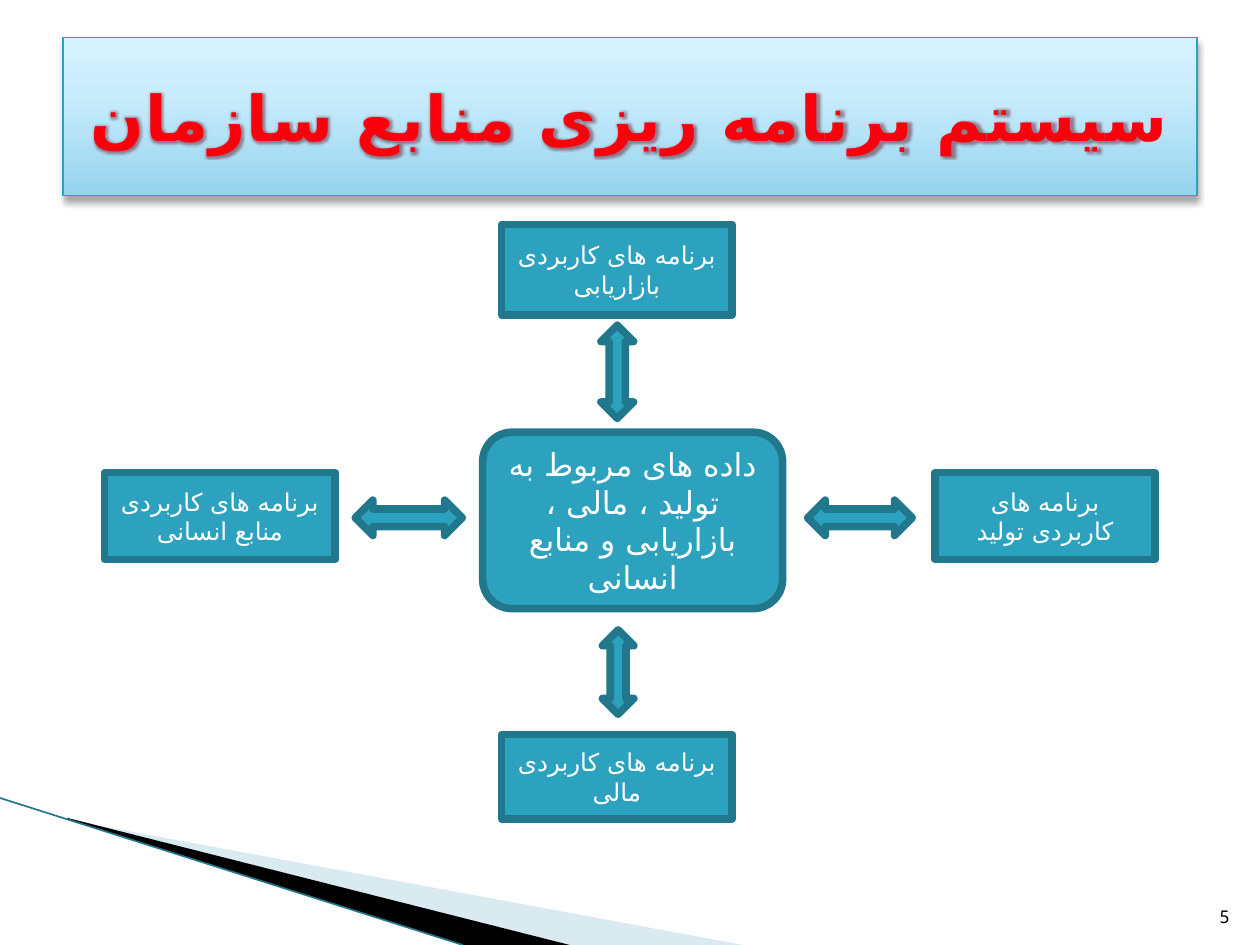
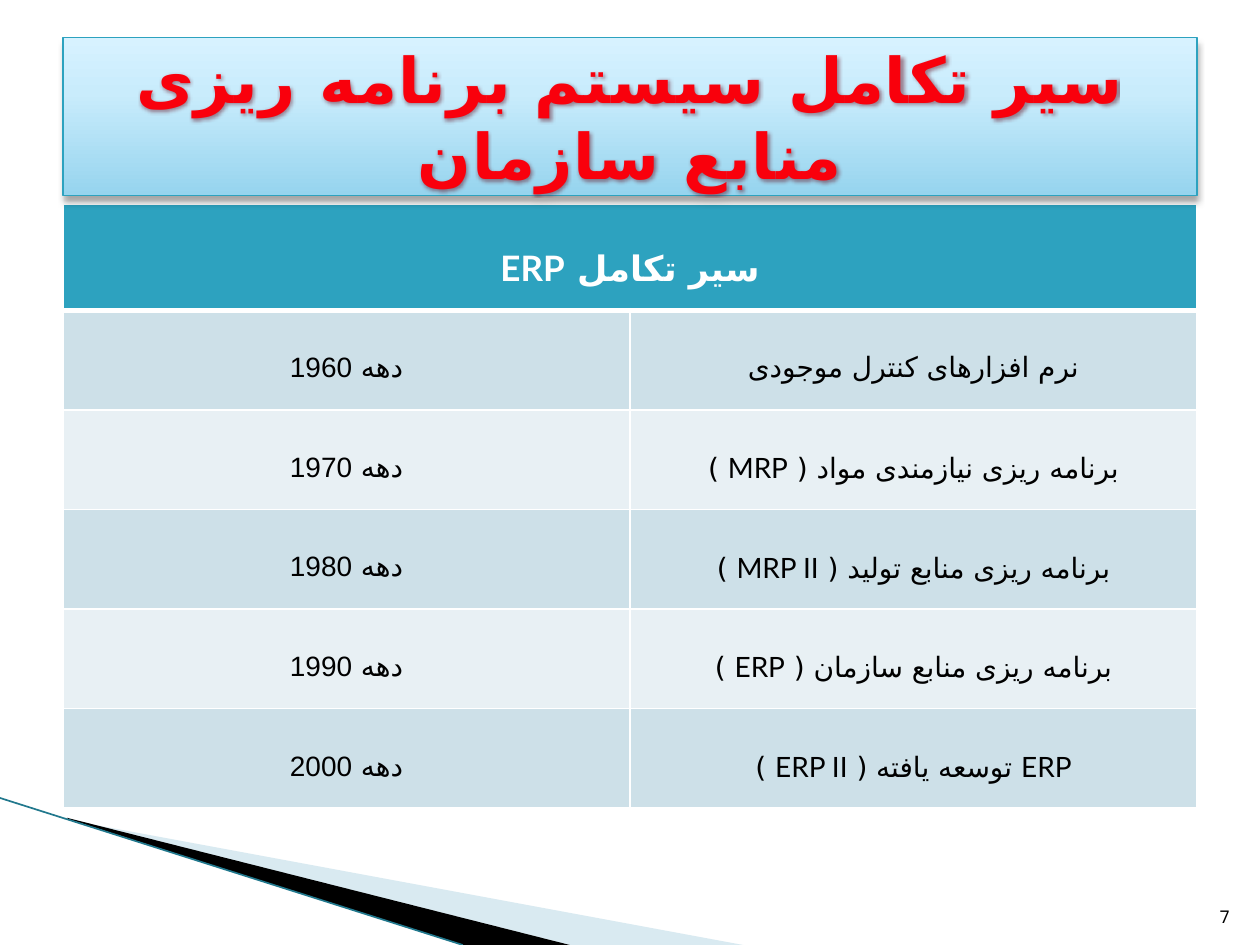
"""Build two Persian slides on enterprise resource planning: a hub diagram and a history table."""
from lxml import etree
from pptx import Presentation
from pptx.dml.color import RGBColor
from pptx.enum.shapes import MSO_CONNECTOR, MSO_SHAPE as SHAPE
from pptx.enum.text import MSO_ANCHOR as ANCHOR, PP_ALIGN as ALIGN
from pptx.oxml import parse_xml
from pptx.oxml.ns import qn
from pptx.util import Pt

COLORS = {
    "teal": "2DA2BF", "dark_teal": "21788D", "pale_blue": "A0CBDC",
    "black": "000000", "white": "FFFFFF", "row_dark": "CDE0E8", "row_light": "E8F0F4",
    "sky_low": "96D4EE", "sky_mid": "C9ECFC", "sky_high": "D7F2FF",
    "red": "F9000C", "deep_red": "B00008", "glow": "600010",
}
RGB = {name: RGBColor.from_string(value) for name, value in COLORS.items()}
FONT = "Lato"
PERSIAN_FONT = "DejaVu Sans"
DIGIT_FONT = "Arial"
DRAWING = 'xmlns:a="http://schemas.openxmlformats.org/drawingml/2006/main"'


def write(frame, text, size, color, bold=False, font=FONT, align=ALIGN.CENTER):
    """Fill a text frame with one styled paragraph and return it."""
    frame.word_wrap = True
    para = frame.paragraphs[0]
    para.text = text
    para.alignment = align
    para.font.size = Pt(size)
    para.font.name = font
    para.font.bold = bold
    para.font.color.rgb = RGB[color]
    etree.SubElement(para._p.pPr.find(qn("a:defRPr")), qn("a:cs"), typeface=PERSIAN_FONT)
    return para


def gradient(stops, angle):
    """Return a linear gradient fill from (percent, colour name) stops."""
    marks = "".join(
        f'<a:gs pos="{percent * 1000}"><a:srgbClr val="{COLORS[name]}"/></a:gs>'
        for percent, name in stops)
    return parse_xml(f'<a:gradFill {DRAWING} rotWithShape="1"><a:gsLst>{marks}</a:gsLst>'
                     f'<a:lin ang="{angle * 60000}" scaled="0"/></a:gradFill>')


deck = Presentation()
deck.slide_width, deck.slide_height = Pt(720), Pt(540)
pages = [deck.slides.add_slide(deck.slide_layouts[6]) for _ in range(2)]
diagram_page, table_page = pages

wedges = [
    ("pale_blue", [(39.6, 468.7), (424.6, 540), (325.7, 540), (39.6, 468)]),
    ("black", [(38.2, 467.3), (325.7, 540), (264, 540), (38.9, 468)]),
]
for page in pages:
    for color, corners in wedges:
        points = [(Pt(x), Pt(y)) for x, y in corners]
        builder = page.shapes.build_freeform(*points[0], scale=1.0)
        builder.add_line_segments(points[1:], close=True)
        wedge = builder.convert_to_shape()
        wedge.shadow.inherit = False
        wedge.fill.solid()
        wedge.fill.fore_color.rgb = RGB[color]
        wedge.line.fill.background()
        if color == "pale_blue":
            tint = wedge._element.spPr.find(".//" + qn("a:srgbClr"))
            etree.SubElement(tint, qn("a:alpha"), val="40000")
    edge = page.shapes.add_connector(MSO_CONNECTOR.STRAIGHT, 0, Pt(456), Pt(264.5), Pt(540))
    edge.line.color.rgb = RGB["dark_teal"]
    edge.line.width = Pt(0.95)
    etree.SubElement(edge._element.spPr, qn("a:effectLst"))

diagram = [
    (SHAPE.ROUNDED_RECTANGLE, 275.8, 247, 171.4, 100.8, 18,
     "داده های مربوط به تولید ، مالی ، بازاریابی و منابع انسانی"),
    (SHAPE.RECTANGLE, 534.2, 270, 126, 49.7, 14, "برنامه های کاربردی تولید"),
    (SHAPE.RECTANGLE, 286.6, 128.2, 131.8, 51.8, 14, "برنامه های کاربردی بازاریابی"),
    (SHAPE.RECTANGLE, 59.8, 270, 131.8, 49.7, 14, "برنامه های کاربردی منابع انسانی"),
    (SHAPE.RECTANGLE, 286.6, 419.8, 131.8, 48.2, 14, "برنامه های کاربردی مالی"),
    (SHAPE.LEFT_RIGHT_ARROW, 461.5, 285.8, 59.8, 20.2, 14, ""),
    (SHAPE.LEFT_RIGHT_ARROW, 203, 285.8, 61.2, 20.2, 14, ""),
    (SHAPE.UP_DOWN_ARROW, 343.4, 185.8, 18.7, 53.3, 14, ""),
    (SHAPE.UP_DOWN_ARROW, 344.2, 360, 18, 48.2, 14, ""),
]
for kind, left, top, width, height, size, label in diagram:
    box = diagram_page.shapes.add_shape(kind, Pt(left), Pt(top), Pt(width), Pt(height))
    box.shadow.inherit = False
    box.fill.solid()
    box.fill.fore_color.rgb = RGB["teal"]
    box.line.color.rgb = RGB["dark_teal"]
    box.line.width = Pt(4.33)
    if label:
        box.text_frame.vertical_anchor = ANCHOR.MIDDLE
        write(box.text_frame, label, size, "white")

history = [
    ("سیر تکامل ERP", ""),
    ("دهه 1960", "نرم افزارهای کنترل موجودی"),
    ("دهه 1970", "برنامه ریزی نیازمندی مواد ( MRP )"),
    ("دهه 1980", "برنامه ریزی منابع تولید ( MRP II )"),
    ("دهه 1990", "برنامه ریزی منابع سازمان ( ERP )"),
    ("دهه 2000", "ERP توسعه یافته ( ERP II )"),
]
table = table_page.shapes.add_table(
    len(history), 2, Pt(36), Pt(116.8), Pt(648), Pt(345.5)).table
table.cell(0, 0).merge(table.cell(0, 1))
for row, texts in enumerate(history):
    table.rows[row].height = Pt(56.9 if row else 60.5)
    fill = "teal" if row == 0 else "row_dark" if row % 2 else "row_light"
    for column, text in enumerate(texts):
        cell = table.cell(row, column)
        cell.vertical_anchor = ANCHOR.MIDDLE
        cell.fill.solid()
        cell.fill.fore_color.rgb = RGB[fill]
        for position, side in enumerate("LRTB"):
            heavy = (row, side) in [(0, "B"), (1, "T")]
            cell._tc.tcPr.insert(position, parse_xml(
                f'<a:ln{side} {DRAWING} w="{Pt(3 if heavy else 1)}"><a:solidFill>'
                f'<a:srgbClr val="{COLORS["white"]}"/></a:solidFill></a:ln{side}>'))
        if text:
            para = write(cell.text_frame, text, 16 if row else 20,
                         "black" if row else "white", bold=row == 0)
            para.line_spacing = 1.5
            para._p.pPr.set("rtl", "1")
            if row and column == 0:
                word, year = text.split()
                para.runs[0].text = word + " "
                span = para.add_run()
                span.text = year
                etree.SubElement(span._r.get_or_add_rPr(), qn("a:cs"), typeface=DIGIT_FONT)

headings = [
    (diagram_page, "سیستم برنامه ریزی منابع سازمان", "5"),
    (table_page, "سیر تکامل سیستم برنامه ریزی منابع سازمان", "7"),
]
for page, heading, number in headings:
    banner = page.shapes.add_shape(SHAPE.RECTANGLE, Pt(36), Pt(21.6), Pt(648), Pt(90))
    banner.line.color.rgb = RGB["teal"]
    banner.line.width = Pt(0.75)
    banner.shadow.inherit = False
    properties = banner._element.spPr
    properties.find(qn("a:ln")).addprevious(
        gradient([(0, "sky_low"), (65, "sky_mid"), (100, "sky_high")], 270))
    properties.find(qn("a:effectLst")).append(parse_xml(
        f'<a:outerShdw {DRAWING} blurRad="{Pt(4)}" dist="{Pt(3)}" dir="5400000" rotWithShape="0">'
        f'<a:srgbClr val="{COLORS["black"]}"><a:alpha val="35000"/></a:srgbClr></a:outerShdw>'))
    banner.text_frame.vertical_anchor = ANCHOR.MIDDLE
    para = write(banner.text_frame, heading, 36, "red", bold=True)
    para._p.pPr.set("rtl", "1")
    style = para.runs[0]._r.get_or_add_rPr()
    style.set("spc", "50")
    style.append(gradient([(25, "red"), (100, "deep_red")], 90))
    para._p.pPr.find(".//" + qn("a:solidFill")).addnext(parse_xml(
        f'<a:effectLst {DRAWING}><a:glow rad="{Pt(4)}"><a:srgbClr val="{COLORS["glow"]}">'
        f'<a:alpha val="45000"/></a:srgbClr></a:glow></a:effectLst>'))

    footer = page.shapes.add_textbox(Pt(681), Pt(504.7), Pt(28.8), Pt(28.8))
    footer.text_frame.vertical_anchor = ANCHOR.BOTTOM
    write(footer.text_frame, number, 10, "black", font="Noto Sans Mono", align=ALIGN.RIGHT)

deck.save("out.pptx")
